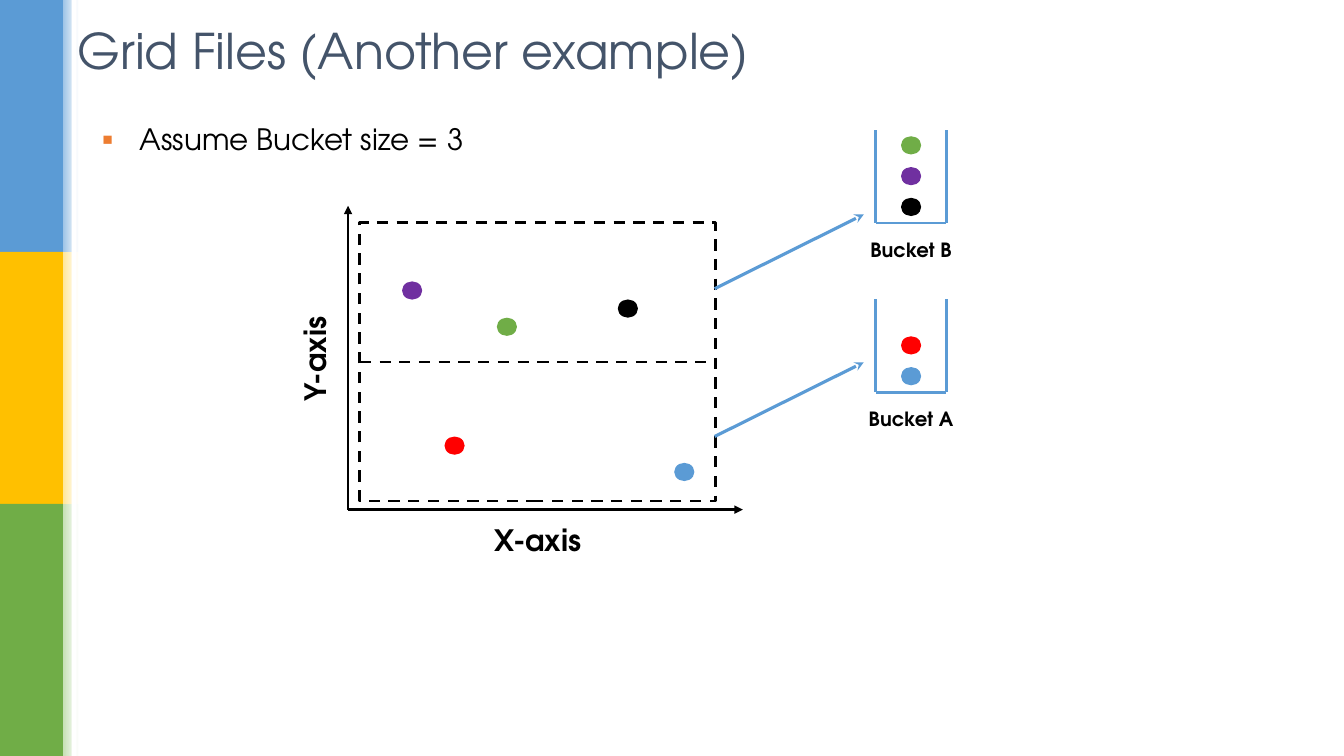
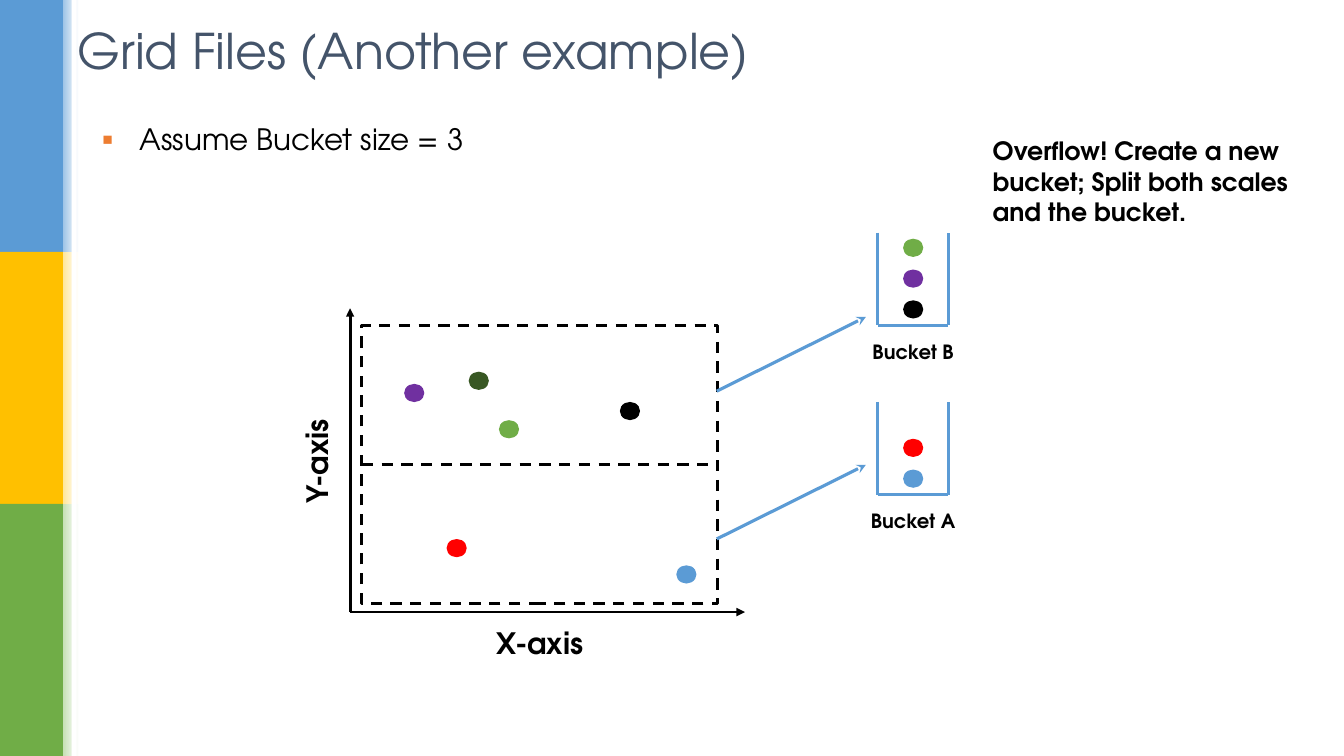
from dataclasses import dataclass
from itertools import pairwise

from lxml import etree
from pptx import Presentation
from pptx.dml.color import RGBColor
from pptx.enum.dml import MSO_LINE
from pptx.enum.shapes import MSO_CONNECTOR, MSO_SHAPE
from pptx.enum.text import MSO_ANCHOR, MSO_AUTO_SIZE, PP_ALIGN
from pptx.oxml.ns import qn
from pptx.presentation import Presentation as Deck
from pptx.shapes.autoshape import Shape
from pptx.shapes.connector import Connector
from pptx.slide import Slide
from pptx.text.text import _Paragraph as Paragraph
from pptx.util import Pt

RECTANGLE, OVAL = MSO_SHAPE.RECTANGLE, MSO_SHAPE.OVAL
STRAIGHT = MSO_CONNECTOR.STRAIGHT
DASH = MSO_LINE.DASH
TOP, MIDDLE = MSO_ANCHOR.TOP, MSO_ANCHOR.MIDDLE
LEFT, CENTER = PP_ALIGN.LEFT, PP_ALIGN.CENTER
LEFT_SIDE, RIGHT_SIDE = 1, 3

FONT = "TeX Gyre Adventor"
COLORS = {
    "white": "FFFFFF",
    "black": "000000",
    "title": "44546A",
    "bullet": "ED7D31",
    "blue": "5B9BD5",
    "gold": "FFC000",
    "green": "70AD47",
    "light blue": "9DC3E6",
    "light gold": "FFE699",
    "light green": "C5E0B4",
    "dark green": "385723",
    "purple": "7030A0",
    "red": "FF0000",
}

SLIDE_WIDTH, SLIDE_HEIGHT = 960, 540
BAND_WIDTH, FADE_WIDTH = 45, 11.5
GRID_WIDTH, GRID_HEIGHT = 254.2, 198.7
AXIS_X, AXIS_Y = -8.4, 204.8
DOT_WIDTH, DOT_HEIGHT = 14.4, 13
BUCKET_X, BUCKET_WIDTH, BUCKET_HEIGHT = 368.6, 50.4, 66.3
BUCKET_DOT_PITCH = 22
LABEL_WIDTH, LABEL_HEIGHT = 82, 26.6
LINK_X, LINK_WIDTH, LINK_RISE = 253.5, 106.5, 53


@dataclass(frozen=True)
class Dot:
    color: str
    x: float
    y: float


@dataclass(frozen=True)
class Bucket:
    """Positions are relative to the grid; dots run from the bottom up."""
    name: str
    top: float
    link_y: float
    dots: tuple[str, ...]


@dataclass(frozen=True)
class Page:
    grid_x: float
    grid_y: float
    extra_dots: tuple[Dot, ...] = ()
    remark: str = ""


DOTS = (
    Dot("purple", 30.2, 41.8),
    Dot("blue", 224.6, 171.4),
    Dot("red", 60.5, 152.6),
    Dot("black", 184.3, 54.7),
    Dot("green", 97.9, 67.7),
)
BUCKETS = (
    Bucket("Bucket A", 54.7, 152.6, ("blue", "red")),
    Bucket("Bucket B", -66.2, 47, ("black", "purple", "green")),
)
PAGES = (
    Page(257, 159.2),
    Page(258.5, 232.4, (Dot("dark green", 76.3, 33.1),),
         "Overflow! Create a new bucket; Split both scales and the bucket."),
)


def rgb(color: str) -> RGBColor:
    return RGBColor.from_string(COLORS[color])


def style_paragraph(para: Paragraph, size: float, color: str = "black",
                    bold: bool = False, align: PP_ALIGN = LEFT) -> None:
    para.alignment = align
    para.space_before = Pt(0)
    para.font.name = FONT
    para.font.size = Pt(size)
    para.font.bold = bold
    para.font.color.rgb = rgb(color)


def place(shape: Shape, x: float, y: float, width: float, height: float) -> None:
    shape.left, shape.top = Pt(x), Pt(y)
    shape.width, shape.height = Pt(width), Pt(height)


def add_filled(shapes, preset: MSO_SHAPE, x: float, y: float, width: float,
               height: float, color: str) -> Shape:
    shape = shapes.add_shape(preset, Pt(x), Pt(y), Pt(width), Pt(height))
    shape.shadow.inherit = False
    shape.fill.solid()
    shape.fill.fore_color.rgb = rgb(color)
    shape.line.fill.background()
    return shape


def add_dot(page: Slide, x: float, y: float, color: str) -> None:
    add_filled(page.shapes, OVAL, x, y, DOT_WIDTH, DOT_HEIGHT, color)


def add_line(page: Slide, start: tuple[float, float], end: tuple[float, float],
             color: str, width: float = 2, head: str = "",
             dashed: bool = False) -> Connector:
    line = page.shapes.add_connector(STRAIGHT, *map(Pt, start + end))
    line.line.color.rgb = rgb(color)
    line.line.width = Pt(width)
    if dashed:
        line.line.dash_style = DASH
    properties = line.element.spPr
    if head:
        outline = properties.find(qn("a:ln"))
        etree.SubElement(outline, qn("a:tailEnd"), type=head)
    etree.SubElement(properties, qn("a:effectLst"))
    return line


def add_label(page: Slide, text: str, x: float, y: float, width: float,
              height: float, size: float, align: PP_ALIGN = LEFT,
              anchor: MSO_ANCHOR = MIDDLE) -> Shape:
    box = page.shapes.add_textbox(Pt(x), Pt(y), Pt(width), Pt(height))
    frame = box.text_frame
    frame.word_wrap = True
    frame.vertical_anchor = anchor
    frame.text = text
    style_paragraph(frame.paragraphs[0], size, bold=True, align=align)
    return box


def add_side_bands(deck: Deck, page: Slide) -> None:
    """Draw the side bands on a page and hand them to the slide master."""
    group = page.shapes.add_group_shape()
    height = SLIDE_HEIGHT / 3
    for row, color in enumerate(("blue", "gold", "green")):
        y = row * height
        add_filled(group.shapes, RECTANGLE, 0, y, BAND_WIDTH, height, color)
        fade = add_filled(group.shapes, RECTANGLE, BAND_WIDTH, y,
                          FADE_WIDTH, height, "white")
        fade.fill.gradient()
        fade.fill.gradient_angle = 0
        for stop, shade in zip(fade.fill.gradient_stops, (f"light {color}", "white")):
            stop.color.rgb = rgb(shade)
    add_filled(group.shapes, RECTANGLE, 51.2, 0, 3.6, SLIDE_HEIGHT, "white")
    for number, tag in enumerate(group.element.iter(qn("p:cNvPr")), 100):
        tag.set("id", str(number))
    deck.slide_master.shapes.element.insert(2, group.element)


def fill_placeholders(page: Slide) -> None:
    title, body = page.placeholders
    place(title, 48.2, 11.5, 828, 47.5)
    title.text_frame.text = "Grid Files (Another example)"
    title.text_frame.vertical_anchor = MIDDLE
    style_paragraph(title.text_frame.paragraphs[0], 35.1, "title")

    place(body, 65.5, 70.6, 287.3, 45.4)
    body.text_frame.text = "Assume Bucket size = 3"
    para = body.text_frame.paragraphs[0]
    properties = para._p.get_or_add_pPr()
    properties.set("marL", str(Pt(27)))
    properties.set("indent", str(Pt(-27)))
    bullet_color = etree.SubElement(properties, qn("a:buClr"))
    etree.SubElement(bullet_color, qn("a:srgbClr"), val=COLORS["bullet"])
    etree.SubElement(properties, qn("a:buSzPct"), val="112000")
    etree.SubElement(properties, qn("a:buChar"), char="▪")
    style_paragraph(para, 21)
    para.line_spacing = 1.5
    para.space_after = Pt(6)
    for shape in (title, body):
        shape.text_frame.auto_size = MSO_AUTO_SIZE.NONE


def add_grid(page: Slide, x: float, y: float, dots: tuple[Dot, ...]) -> None:
    corner = (x + AXIS_X, y + AXIS_Y)
    add_line(page, corner, (x + 273.6, y + AXIS_Y), "black", head="triangle")
    add_line(page, corner, (x + AXIS_X, y - 12.2), "black", head="triangle")
    add_label(page, "X-axis", x + 89.3, y + 210.2, 87, 32.4, 21, anchor=TOP)
    y_label = add_label(page, "Y-axis", x - 75.6, y + 74.9, 87, 32.4, 21, anchor=TOP)
    y_label.rotation = 270

    frame = add_filled(page.shapes, RECTANGLE, x, y, GRID_WIDTH, GRID_HEIGHT, "white")
    frame.fill.background()
    frame.line.color.rgb = rgb("black")
    frame.line.width = Pt(2)
    frame.line.dash_style = DASH
    middle = y + GRID_HEIGHT / 2
    divider = add_line(page, (x, middle), (x + GRID_WIDTH, middle), "black", dashed=True)
    divider.begin_connect(frame, LEFT_SIDE)
    divider.end_connect(frame, RIGHT_SIDE)
    for dot in dots:
        add_dot(page, x + dot.x, y + dot.y, dot.color)


def add_bucket(page: Slide, x: float, y: float, bucket: Bucket) -> None:
    left, top = x + BUCKET_X, y + bucket.top
    right, bottom = left + BUCKET_WIDTH, top + BUCKET_HEIGHT
    corners = ((left, top), (left, bottom), (right, bottom), (right, top))
    for start, end in pairwise(corners):
        add_line(page, start, end, "blue")

    link_x, link_y = x + LINK_X, y + bucket.link_y
    add_line(page, (link_x, link_y), (link_x + LINK_WIDTH, link_y - LINK_RISE),
             "blue", 2.25, "stealth")
    center = (left + right) / 2
    add_label(page, bucket.name, center - LABEL_WIDTH / 2, bottom + 5.4,
              LABEL_WIDTH, LABEL_HEIGHT, 14, CENTER)
    for level, color in enumerate(bucket.dots):
        add_dot(page, center - DOT_WIDTH / 2,
                bottom - 18 - level * BUCKET_DOT_PITCH, color)


def main() -> None:
    deck = Presentation()
    deck.slide_width, deck.slide_height = Pt(SLIDE_WIDTH), Pt(SLIDE_HEIGHT)
    for content in PAGES:
        page = deck.slides.add_slide(deck.slide_layouts[1])
        fill_placeholders(page)
        add_grid(page, content.grid_x, content.grid_y, DOTS + content.extra_dots)
        for bucket in BUCKETS:
            add_bucket(page, content.grid_x, content.grid_y, bucket)
        if content.remark:
            add_label(page, content.remark, 702, 88.6, 231, 81.4, 18)
    add_side_bands(deck, deck.slides[0])
    deck.save("out.pptx")


if __name__ == "__main__":
    main()
